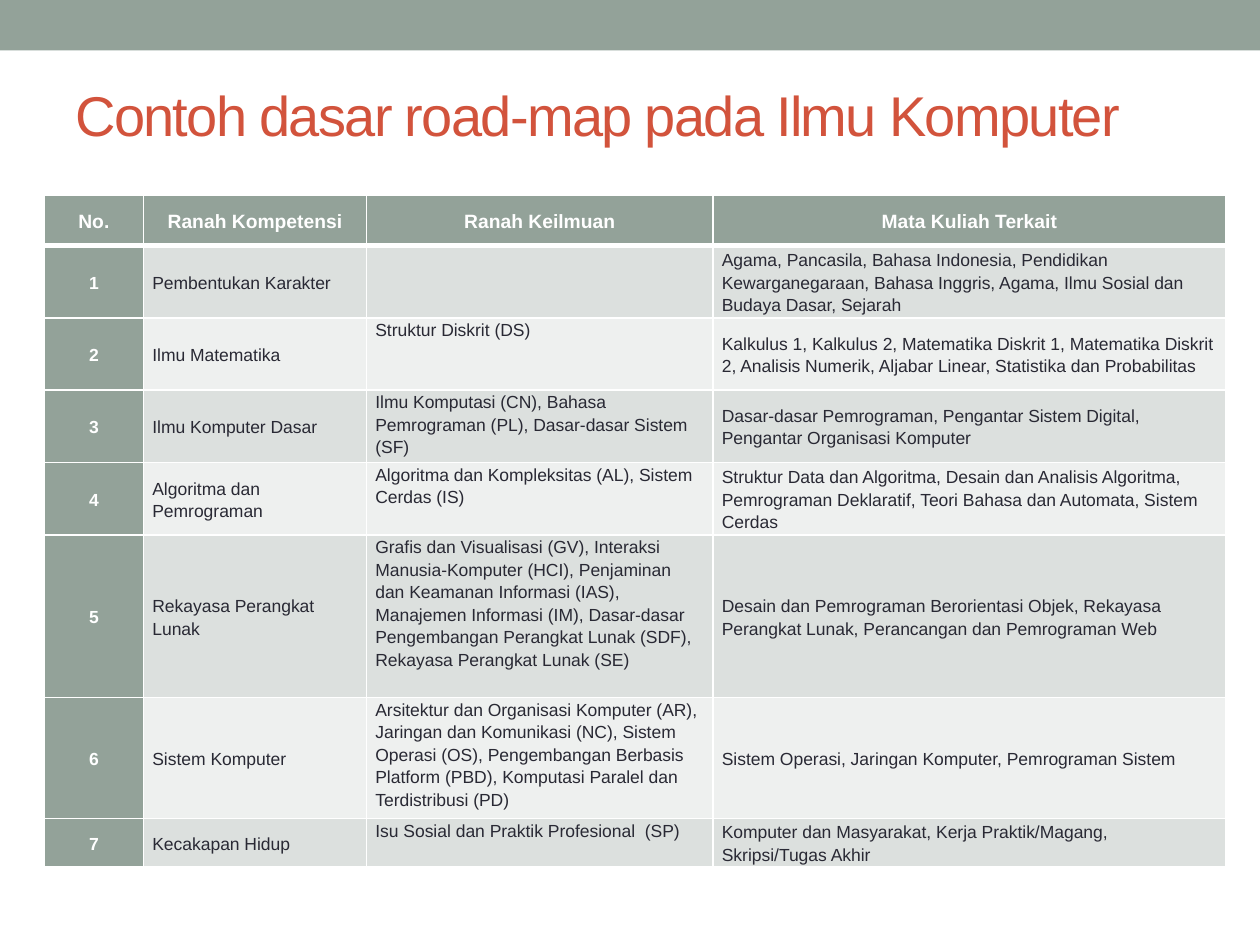
"""Build the slide with the road-map table for Ilmu Komputer."""
import pptx
import pptx.util
import pptx.dml.color
import pptx.enum.shapes
import pptx.enum.text
import pptx.oxml
import pptx.oxml.ns
from dataclasses import dataclass

Inches = pptx.util.Inches
Pt = pptx.util.Pt
RGB = pptx.dml.color.RGBColor.from_string
ALIGN = pptx.enum.text.PP_ALIGN
ANCHOR = pptx.enum.text.MSO_ANCHOR

TITLE = "Contoh dasar road-map pada Ilmu Komputer"
HEADINGS = ("No.", "Ranah Kompetensi", "Ranah Keilmuan", "Mata Kuliah Terkait")
COMPETENCIES = [
    ("Pembentukan Karakter", "",
     "Agama, Pancasila, Bahasa Indonesia, Pendidikan Kewarganegaraan, Bahasa Inggris, "
     "Agama, Ilmu Sosial dan Budaya Dasar, Sejarah"),
    ("Ilmu Matematika", "Struktur Diskrit (DS)",
     "Kalkulus 1, Kalkulus 2, Matematika Diskrit 1, Matematika Diskrit 2, "
     "Analisis Numerik, Aljabar Linear, Statistika dan Probabilitas"),
    ("Ilmu Komputer Dasar",
     "Ilmu Komputasi (CN), Bahasa Pemrograman (PL), Dasar-dasar Sistem (SF)",
     "Dasar-dasar Pemrograman, Pengantar Sistem Digital, Pengantar Organisasi Komputer"),
    ("Algoritma dan Pemrograman",
     "Algoritma dan Kompleksitas (AL), Sistem Cerdas (IS)",
     "Struktur Data dan Algoritma, Desain dan Analisis Algoritma, "
     "Pemrograman Deklaratif, Teori Bahasa dan Automata, Sistem Cerdas"),
    ("Rekayasa Perangkat Lunak",
     "Grafis dan Visualisasi (GV), Interaksi Manusia-Komputer (HCI), Penjaminan dan "
     "Keamanan Informasi (IAS), Manajemen Informasi (IM), Dasar-dasar Pengembangan "
     "Perangkat Lunak (SDF), Rekayasa Perangkat Lunak (SE)",
     "Desain dan Pemrograman Berorientasi Objek, Rekayasa Perangkat Lunak, "
     "Perancangan dan Pemrograman Web"),
    ("Sistem Komputer",
     "Arsitektur dan Organisasi Komputer (AR), Jaringan dan Komunikasi (NC), Sistem "
     "Operasi (OS), Pengembangan Berbasis Platform (PBD), Komputasi Paralel dan "
     "Terdistribusi (PD)",
     "Sistem Operasi, Jaringan Komputer, Pemrograman Sistem"),
    ("Kecakapan Hidup", "Isu Sosial dan Praktik Profesional  (SP)",
     "Komputer dan Masyarakat, Kerja Praktik/Magang, Skripsi/Tugas Akhir"),
]
COLUMN_WIDTHS = (0.79, 1.77, 2.75, 4.07)
ROW_HEIGHTS = (0.4, 0.57, 0.57, 0.57, 0.57, 1.29, 0.95, 0.38)
FIELD_COLUMN = 2


@dataclass(frozen=True)
class Theme:
    font: str = "Arial"
    accent: str = "93A299"
    title: str = "D2533C"
    body: str = "292934"
    light: str = "FFFFFF"
    bands: tuple = ("EEF0EF", "DCE0DE")
    title_size: int = 32
    heading_size: int = 11
    body_size: int = 10
    line_spacing: float = 1.15
    rule: int = 1
    heading_rule: int = 3


THEME = Theme()


def add_run(paragraph, text, size, color, bold=False):
    run = paragraph.add_run()
    run.text = text
    run.font.name = THEME.font
    run.font.size = Pt(size)
    run.font.bold = bold
    run.font.color.rgb = RGB(color)
    return run


def add_border(cell, side, points):
    cell._tc.get_or_add_tcPr().append(pptx.oxml.parse_xml(
        f'<a:ln{side} {pptx.oxml.ns.nsdecls("a")} w="{Pt(points)}">'
        f'<a:solidFill><a:srgbClr val="{THEME.light}"/></a:solidFill></a:ln{side}>'))


def format_cell(cell, text, row, column):
    heading = row == 0
    accented = heading or column == 0
    top = THEME.heading_rule if row == 1 else THEME.rule
    bottom = THEME.heading_rule if heading else THEME.rule
    for side, points in zip("LRTB", (THEME.rule, THEME.rule, top, bottom)):
        add_border(cell, side, points)
    cell.fill.solid()
    cell.fill.fore_color.rgb = RGB(THEME.accent if accented else THEME.bands[row % 2])
    cell.margin_left = cell.margin_right = Inches(0.07)
    cell.margin_top = cell.margin_bottom = 0
    top_anchored = column == FIELD_COLUMN and not heading
    cell.vertical_anchor = ANCHOR.TOP if top_anchored else ANCHOR.MIDDLE
    if text:
        paragraph = cell.text_frame.paragraphs[0]
        paragraph.alignment = ALIGN.CENTER if accented else ALIGN.LEFT
        paragraph.line_spacing = THEME.line_spacing
        add_run(paragraph, text, THEME.heading_size if heading else THEME.body_size,
                THEME.light if accented else THEME.body, accented)


def add_band(slide, width):
    band = slide.shapes.add_shape(
        pptx.enum.shapes.MSO_SHAPE.RECTANGLE, 0, 0, width, Inches(0.4))
    band.shadow.inherit = False
    band.fill.solid()
    band.fill.fore_color.rgb = RGB(THEME.accent)
    band.line.fill.background()


def add_title(slide):
    title = slide.shapes.add_textbox(Inches(0.5), Inches(0.58), Inches(9), Inches(0.65))
    frame = title.text_frame
    frame.word_wrap = True
    frame.vertical_anchor = ANCHOR.MIDDLE
    run = add_run(frame.paragraphs[0], TITLE, THEME.title_size, THEME.title)
    run.font._element.set("spc", "-100")


def add_roadmap(slide):
    rows = [HEADINGS] + [(str(number), *competency)
                         for number, competency in enumerate(COMPETENCIES, 1)]
    roadmap = slide.shapes.add_table(
        len(rows), len(HEADINGS), Inches(0.35), Inches(1.55),
        Inches(sum(COLUMN_WIDTHS)), Inches(sum(ROW_HEIGHTS))).table
    for column, width in zip(roadmap.columns, COLUMN_WIDTHS):
        column.width = Inches(width)
    for row, height in zip(roadmap.rows, ROW_HEIGHTS):
        row.height = Inches(height)
    for row, texts in enumerate(rows):
        for column, text in enumerate(texts):
            format_cell(roadmap.cell(row, column), text, row, column)


def main():
    deck = pptx.Presentation()
    deck.slide_width, deck.slide_height = Inches(10), Inches(7.5)
    slide = deck.slides.add_slide(deck.slide_layouts[6])
    add_band(slide, deck.slide_width)
    add_title(slide)
    add_roadmap(slide)
    deck.save("out.pptx")


if __name__ == "__main__":
    main()
